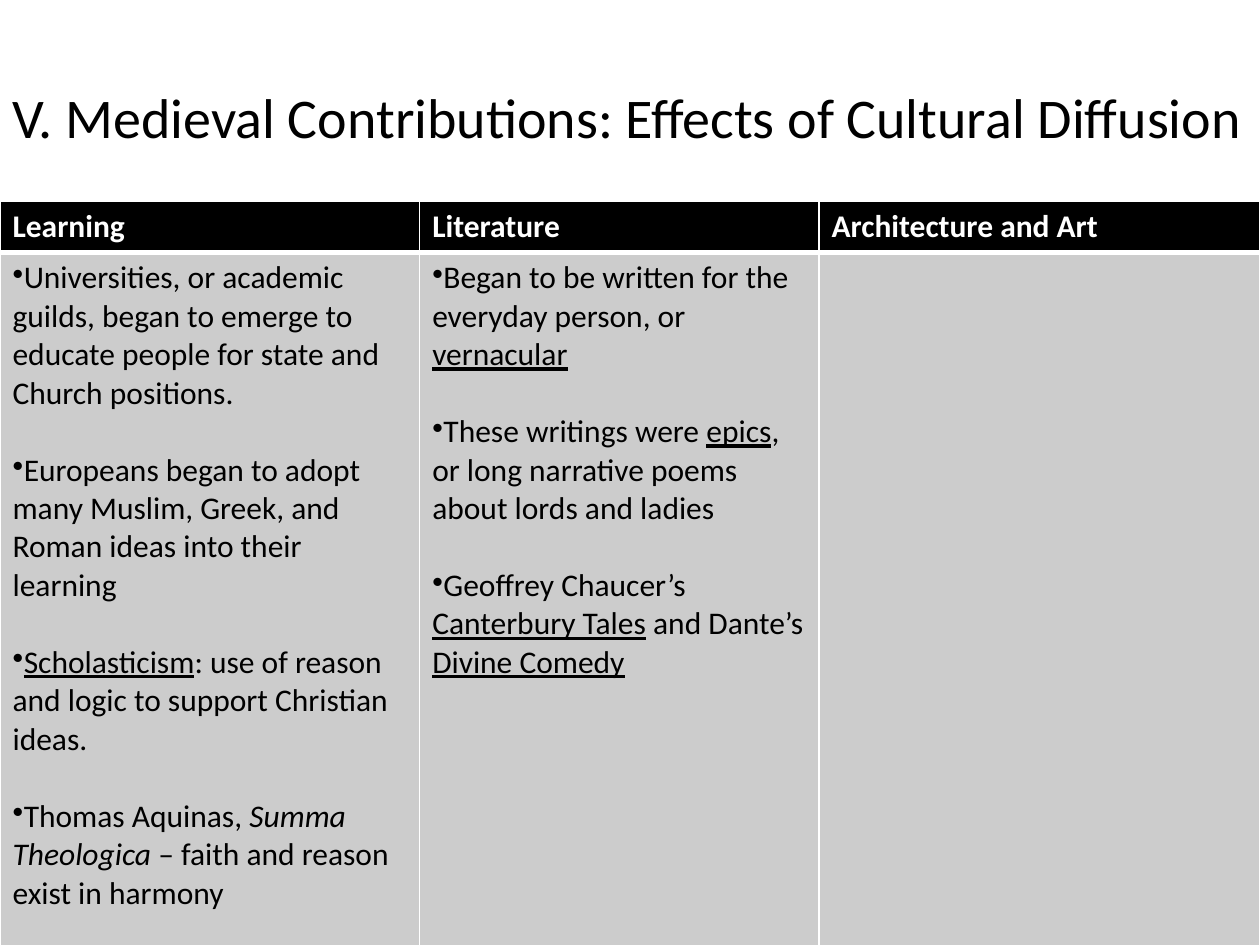
from dataclasses import dataclass

from lxml import etree
from pptx import Presentation
from pptx.dml.color import RGBColor
from pptx.enum.text import MSO_ANCHOR, MSO_AUTO_SIZE, PP_ALIGN
from pptx.oxml.ns import qn
from pptx.util import Cm, Pt

LEFT = PP_ALIGN.LEFT
MIDDLE = MSO_ANCHOR.MIDDLE
NO_FIT = MSO_AUTO_SIZE.NONE
TITLE_ONLY = 5


@dataclass(frozen=True)
class Theme:
    font: str = "Calibri"
    ink: str = "000000"
    paper: str = "FFFFFF"
    body_fill: str = "CCCCCC"
    title_size: int = 32
    text_size: int = 18
    bullet_gap: int = 22
    thin: int = 1
    thick: int = 3


UNDERLINE = {"underline": True}
ITALIC = {"italic": True}

TITLE = "V. Medieval Contributions: Effects of Cultural Diffusion"

# Each column: heading, width in cm, bullets made of (text, format) spans
COLUMNS = [
    ("Learning", 8.46, [
        [("Universities, or academic guilds, began to emerge to educate "
          "people for state and Church positions.", {})],
        [("Europeans began to adopt many Muslim, Greek, and Roman ideas "
          "into their learning", {})],
        [("Scholasticism", UNDERLINE),
         (": use of reason and logic to support Christian ideas.", {})],
        [("Thomas Aquinas, ", {}), ("Summa Theologica", ITALIC),
         (" – faith and reason exist in harmony", {})],
    ]),
    ("Literature", 8.05, [
        [("Began to be written for the everyday person, or ", {}),
         ("vernacular", UNDERLINE)],
        [("These writings were ", {}), ("epics", UNDERLINE),
         (", or long narrative poems about lords and ladies", {})],
        [("Geoffrey Chaucer’s ", {}), ("Canterbury Tales", UNDERLINE),
         (" and Dante’s ", {}), ("Divine Comedy", UNDERLINE)],
    ]),
    ("Architecture and Art", 8.89, []),
]
ROW_HEIGHTS = (1.02, 13.97)


class SlideBuilder:
    def __init__(self, deck, theme):
        self.theme = theme
        self.page = deck.slides.add_slide(deck.slide_layouts[TITLE_ONLY])

    def add_span(self, para, text, color, size, **extra):
        span = para.add_run()
        span.text = text
        values = {"name": self.theme.font, "size": Pt(size), **extra}
        for name, value in values.items():
            setattr(span.font, name, value)
        span.font.color.rgb = RGBColor.from_string(color)

    def add_title(self, text, left, top, width, height):
        title = self.page.shapes.title
        place = {"left": left, "top": top, "width": width, "height": height}
        for name, value in place.items():
            setattr(title, name, Cm(value))
        frame = title.text_frame
        layout = {"word_wrap": True, "auto_size": NO_FIT,
                  "vertical_anchor": MIDDLE}
        for name, value in layout.items():
            setattr(frame, name, value)
        para = frame.paragraphs[0]
        para.alignment = LEFT
        self.add_span(para, text, self.theme.ink, self.theme.title_size)

    def style_cell(self, cell, fill, top, bottom):
        cell.fill.solid()
        cell.fill.fore_color.rgb = RGBColor.from_string(fill)
        # Borders come before the fill in the cell properties
        thin = self.theme.thin
        widths = {"lnL": thin, "lnR": thin, "lnT": top, "lnB": bottom}
        properties = cell._tc.get_or_add_tcPr()
        for index, (tag, width) in enumerate(widths.items()):
            line = etree.Element(qn(f"a:{tag}"), w=str(Pt(width)))
            paint = etree.SubElement(line, qn("a:solidFill"))
            etree.SubElement(paint, qn("a:srgbClr"), val=self.theme.paper)
            properties.insert(index, line)

    def add_bullets(self, cell, bullets):
        frame = cell.text_frame
        for index, spans in enumerate(bullets):
            para = frame.add_paragraph() if index else frame.paragraphs[0]
            if index:
                para.space_before = Pt(self.theme.bullet_gap)
            properties = para._p.get_or_add_pPr()
            properties.set("marL", "0")
            properties.set("indent", "0")
            etree.SubElement(properties, qn("a:buChar"), char="•")
            for text, extra in spans:
                self.add_span(para, text, self.theme.ink,
                              self.theme.text_size, bold=False, **extra)

    def add_table(self, columns, heights, left, top):
        theme = self.theme
        width = sum(column[1] for column in columns)
        table = self.page.shapes.add_table(
            len(heights), len(columns), Cm(left), Cm(top),
            Cm(width), Cm(sum(heights))).table
        table.horz_banding = False
        for row, height in zip(table.rows, heights):
            row.height = Cm(height)
        for index, (heading, column_width, bullets) in enumerate(columns):
            table.columns[index].width = Cm(column_width)
            head, body = table.cell(0, index), table.cell(1, index)
            self.style_cell(head, theme.ink, theme.thin, theme.thick)
            self.style_cell(body, theme.body_fill, theme.thick, theme.thin)
            self.add_span(head.text_frame.paragraphs[0], heading,
                          theme.paper, theme.text_size, bold=True)
            self.add_bullets(body, bullets)


def main():
    deck = Presentation()
    deck.slide_width, deck.slide_height = Cm(25.4), Cm(19.05)
    builder = SlideBuilder(deck, Theme())
    # Title band
    builder.add_title(TITLE, 0, 0.76, 25.4, 3.18)
    # Three-column table down to the foot of the slide
    builder.add_table(COLUMNS, ROW_HEIGHTS, 0, 4.06)
    deck.save("out.pptx")


if __name__ == "__main__":
    main()
